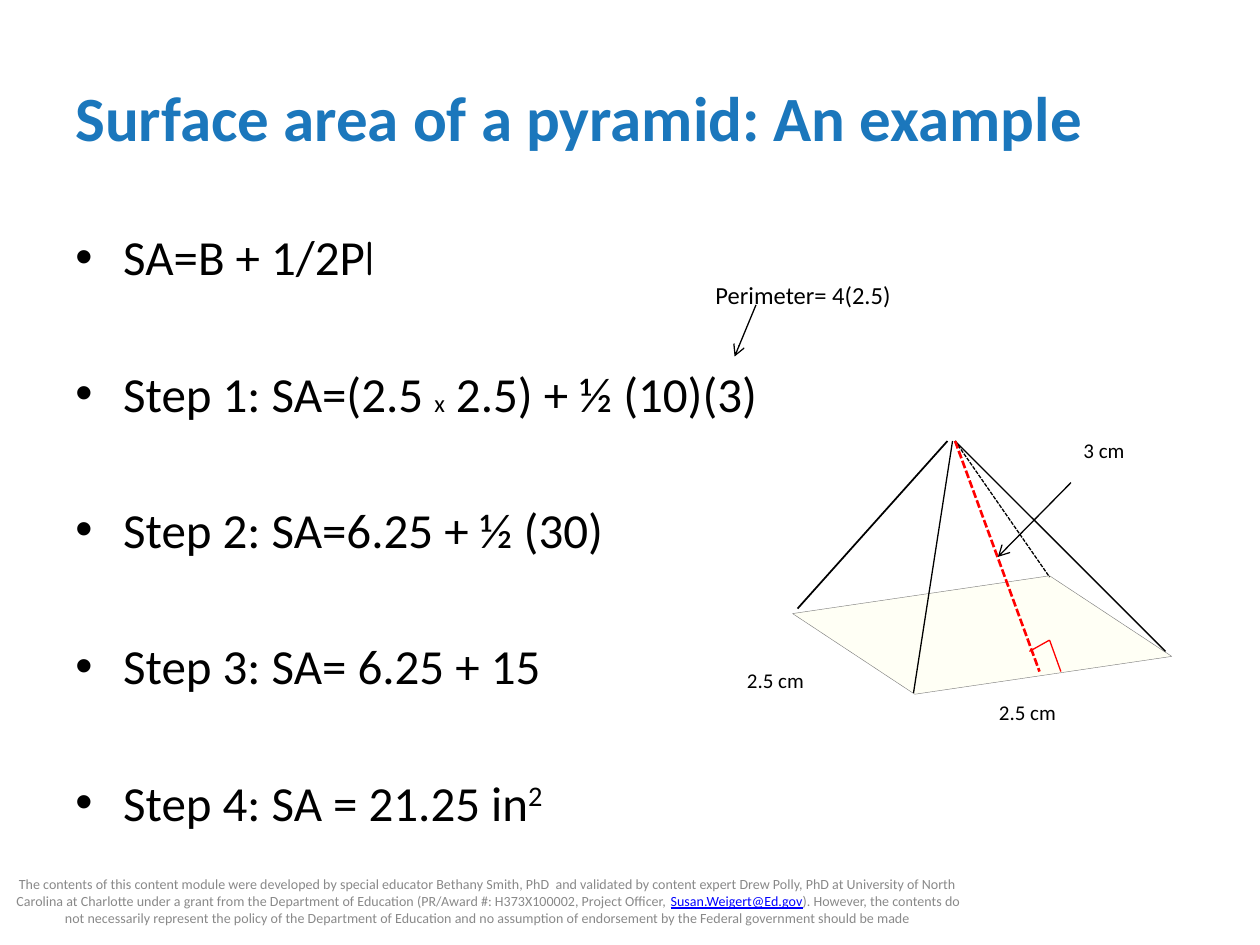
import dataclasses

import lxml.etree
import pptx
import pptx.dml.color
import pptx.enum.dml
import pptx.enum.shapes
import pptx.enum.text
import pptx.oxml.ns
import pptx.util

Inches = pptx.util.Inches
Pt = pptx.util.Pt
qn = pptx.oxml.ns.qn
ANCHOR = pptx.enum.text.MSO_ANCHOR
ALIGN = pptx.enum.text.PP_ALIGN
FIT = pptx.enum.text.MSO_AUTO_SIZE


def rgb(value):
    return pptx.dml.color.RGBColor.from_string(value)


@dataclasses.dataclass(frozen=True)
class Theme:
    font: str = "Calibri"
    formula_font: str = "Comic Neue"
    title: str = "1B77BC"
    ink: str = "000000"
    muted: str = "898989"
    email: str = "0000FF"
    height: str = "FF0000"
    base: str = "FFFFF5"
    base_edge: str = "808080"
    title_size: float = 36
    body_size: float = 28
    note_size: float = 14
    label_size: float = 12
    footer_size: float = 8
    step_gap: float = 44.3


THEME = Theme()

STEPS = [
    [("SA=B + 1/2P", {}), ("l", {"name": THEME.formula_font})],
    [("Step 1: SA=(2.5 ", {}), ("x", {"size": Pt(THEME.note_size)}), (" 2.5) + ½ (10)(3)", {})],
    [("Step 2: SA=6.25 + ½ (30)", {})],
    [("Step 3: SA= 6.25 + 15", {})],
    [("Step 4: SA = 21.25 in", {}), ("2", {"superscript": True})],
]

FOOTER = [
    ("The contents of this content module were developed by special educator Bethany Smith, PhD  and "
     "validated by content expert Drew Polly, PhD at University of North Carolina at Charlotte under a "
     "grant from the Department of Education (PR/Award #: H373X100002, Project Officer, ", {}),
    ("Susan.Weigert@Ed.gov", {"color": THEME.email, "underline": True}),
    ("). However, the contents do not necessarily represent the policy of the Department of Education "
     "and no assumption of endorsement by the Federal government should be made", {}),
]

BASE = [(6.29, 4.87), (8.33, 4.57), (9.3, 5.21), (7.26, 5.51)]

PYRAMID_LINES = [
    ((7.56, 3.5), (7.25, 5.5), {}),
    ((7.52, 3.5), (6.33, 4.83), {"width": 1}),
    ((7.58, 3.5), (9.25, 5.17), {}),
    ((7.58, 3.5), (8.33, 4.58), {"dashed": True}),
    ((7.58, 3.5), (8.25, 5.33), {"color": THEME.height, "width": 1.5, "dashed": True}),
    ((8.5, 3.83), (7.92, 4.42), {"arrow": True}),
    ((8.33, 5.08), (8.42, 5.33), {"color": THEME.height}),
    ((8.33, 5.08), (8.17, 5.17), {"color": THEME.height}),
]

LABELS = [
    ("3 cm", (8.5, 3.42, 0.58, 0.3)),
    ("2.5 cm", (7.83, 5.5, 0.83, 0.3)),
    ("2.5 cm", (5.83, 5.25, 0.83, 0.3)),
]


def add_runs(p, runs, size, color, bold=False):
    for text, changes in runs:
        r = p.add_run()
        r.text = text
        fmt = {"name": THEME.font, "size": Pt(size), "bold": bold, "color": color, **changes}
        r.font.color.rgb = rgb(fmt.pop("color"))
        if fmt.pop("superscript", False):
            r.font._element.set("baseline", "30000")
        for name, value in fmt.items():
            setattr(r.font, name, value)


def add_box(s, at, **frame):
    tf = s.shapes.add_textbox(*map(Inches, at)).text_frame
    for name, value in {"word_wrap": True, **frame}.items():
        setattr(tf, name, value)
    return tf


def add_text(s, at, runs, size, color, bold=False, align=ALIGN.LEFT, **frame):
    p = add_box(s, at, **frame).paragraphs[0]
    p.alignment = align
    add_runs(p, runs, size, color, bold)


def add_bullets(s, at, items):
    tf = add_box(s, at)
    for i, runs in enumerate(items):
        p = tf.add_paragraph() if i else tf.paragraphs[0]
        pPr = p._p.get_or_add_pPr()
        pPr.set("marL", str(Inches(0.38)))
        pPr.set("indent", str(-Inches(0.38)))
        lxml.etree.SubElement(pPr, qn("a:buFont"), typeface="Arial")
        lxml.etree.SubElement(pPr, qn("a:buChar"), char="•")
        if i:
            p.space_before = Pt(THEME.step_gap)
        add_runs(p, runs, THEME.body_size, THEME.ink)


def add_line(s, start, end, color=THEME.ink, width=0.75, dashed=False, arrow=False):
    line = s.shapes.add_connector(
        pptx.enum.shapes.MSO_CONNECTOR.STRAIGHT, *map(Inches, start + end))
    line.line.color.rgb = rgb(color)
    line.line.width = Pt(width)
    if dashed:
        line.line.dash_style = pptx.enum.dml.MSO_LINE.SQUARE_DOT
    if arrow:
        lxml.etree.SubElement(line.line._get_or_add_ln(), qn("a:tailEnd"), type="arrow")
    lxml.etree.SubElement(line._element.spPr, qn("a:effectLst"))


def add_polygon(s, points, fill, edge):
    corners = [tuple(map(Inches, point)) for point in points]
    builder = s.shapes.build_freeform(*corners[0])
    builder.add_line_segments(corners[1:], close=True)
    sp = builder.convert_to_shape()
    sp.shadow.inherit = False
    sp.fill.solid()
    sp.fill.fore_color.rgb = rgb(fill)
    sp.line.color.rgb = rgb(edge)
    sp.line.width = Pt(0.25)


def add_pyramid(s):
    add_polygon(s, BASE, THEME.base, THEME.base_edge)
    for start, end, style in PYRAMID_LINES:
        add_line(s, start, end, **style)
    for text, at in LABELS:
        add_text(s, at, [(text, {})], THEME.label_size, THEME.ink, auto_size=FIT.SHAPE_TO_FIT_TEXT)


def main():
    prs = pptx.Presentation()
    prs.slide_width, prs.slide_height = Inches(10), Inches(7.5)
    s = prs.slides.add_slide(prs.slide_layouts[6])
    add_text(s, (0.5, 0.3, 9, 1.25), [("Surface area of a pyramid: An example", {})],
             THEME.title_size, THEME.title, bold=True, vertical_anchor=ANCHOR.MIDDLE)
    add_bullets(s, (0.5, 1.75, 9, 4.95), STEPS)
    add_text(s, (0, 6.95, 7.75, 0.4), FOOTER, THEME.footer_size, THEME.muted,
             align=ALIGN.CENTER, vertical_anchor=ANCHOR.MIDDLE)
    add_text(s, (5.58, 2.17, 2.08, 0.34), [("Perimeter= 4(2.5)", {})],
             THEME.note_size, THEME.ink, auto_size=FIT.SHAPE_TO_FIT_TEXT)
    add_line(s, (6, 2.42), (5.83, 2.83), arrow=True)
    add_pyramid(s)
    prs.save("out.pptx")


if __name__ == "__main__":
    main()
